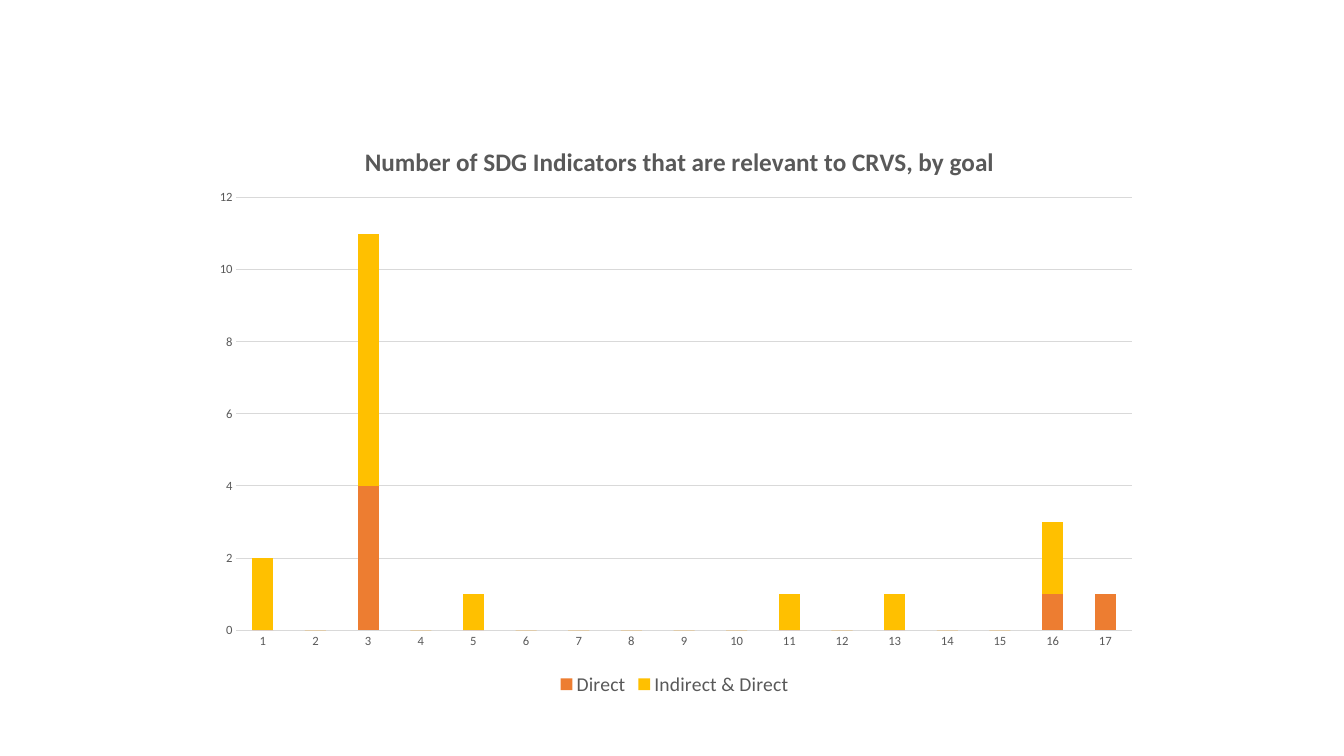
from dataclasses import dataclass

from pptx import Presentation
from pptx import util as u
from pptx.chart import chart as charts
from pptx.chart import data as chart_data
from pptx.dml import color
from pptx.enum import chart as kinds
from pptx.oxml import ns, xmlchemy


@dataclass(frozen=True)
class Theme:
    font: str = "Calibri"
    ink: str = "595959"
    rule: str = "D9D9D9"
    title_size: int = 18
    legend_size: int = 14
    axis_size: int = 9
    rule_width: float = 0.75


@dataclass(frozen=True)
class Measure:
    name: str
    fill: str
    counts: dict[int, int]  # goal number -> indicators; other goals have none


THEME = Theme()
TITLE = "Number of SDG Indicators that are relevant to CRVS, by goal"
GOALS = range(1, 18)
MEASURES = (
    Measure("Direct", "ED7D31", {3: 4, 16: 1, 17: 1}),
    Measure("Indirect & Direct", "FFC000", {1: 2, 3: 7, 5: 1, 11: 1, 13: 1, 16: 2}),
)


def rgb(code: str) -> color.RGBColor:
    return color.RGBColor.from_string(code)


def style_font(font, size: int, bold: bool = False) -> None:
    font.name = THEME.font
    font.size = u.Pt(size)
    font.bold = bold
    font.color.rgb = rgb(THEME.ink)


def style_rule(line) -> None:
    line.color.rgb = rgb(THEME.rule)
    line.width = u.Pt(THEME.rule_width)


def place(part: xmlchemy.BaseOxmlElement, index: int, **settings: object) -> None:
    """Give a chart part a manual layout, in fractions of the chart."""
    for old in part.findall(ns.qn("c:layout")):
        part.remove(old)
    layout = xmlchemy.OxmlElement("c:layout")
    manual = xmlchemy.OxmlElement("c:manualLayout")
    layout.append(manual)
    for tag, value in settings.items():
        setting = xmlchemy.OxmlElement(f"c:{tag}")
        setting.set("val", str(value))
        manual.append(setting)
    part.insert(index, layout)


def add_goal_chart(page) -> charts.Chart:
    data = chart_data.CategoryChartData(number_format="General")
    data.categories = [str(goal) for goal in GOALS]
    for measure in MEASURES:
        data.add_series(measure.name, [measure.counts.get(goal, 0) for goal in GOALS])
    frame = page.shapes.add_chart(
        kinds.XL_CHART_TYPE.COLUMN_STACKED,
        u.Cm(5), u.Cm(2.92), u.Cm(24), u.Cm(14.73), data,
    )
    return frame.chart


def style_columns(chart: charts.Chart) -> None:
    plot = chart.plots[0]
    plot.vary_by_categories = False
    plot.gap_width = 150
    plot.overlap = 100
    for series, measure in zip(plot.series, MEASURES):
        series.format.fill.solid()
        series.format.fill.fore_color.rgb = rgb(measure.fill)
    place(chart.element.find(".//" + ns.qn("c:plotArea")), 0,
          layoutTarget="inner", xMode="edge", yMode="edge",
          x=0.04, y=0.14, w=0.94, h=0.74)


def style_axes(chart: charts.Chart) -> None:
    for axis in (chart.category_axis, chart.value_axis):
        axis.major_tick_mark = kinds.XL_TICK_MARK.NONE
        axis.minor_tick_mark = kinds.XL_TICK_MARK.NONE
        style_font(axis.tick_labels.font, THEME.axis_size)
    style_rule(chart.category_axis.format.line)
    values = chart.value_axis
    values.minimum_scale, values.maximum_scale, values.major_unit = 0, 12, 2
    values.format.line.fill.background()
    values.has_major_gridlines = True
    style_rule(values.major_gridlines.format.line)


def add_title(chart: charts.Chart) -> None:
    chart.has_title = True
    para = chart.chart_title.text_frame.paragraphs[0]
    span = para.add_run()
    span.text = TITLE
    style_font(span.font, THEME.title_size, bold=True)
    chart.chart_title.include_in_layout = False
    place(chart.element.find(".//" + ns.qn("c:title")), 1,
          xMode="edge", yMode="edge", x=0.17, y=0.04)


def add_legend(chart: charts.Chart) -> None:
    chart.has_legend = True
    chart.legend.position = kinds.XL_LEGEND_POSITION.BOTTOM
    chart.legend.include_in_layout = False
    style_font(chart.legend.font, THEME.legend_size)


def main() -> None:
    deck = Presentation()
    deck.slide_width, deck.slide_height = u.Cm(33.87), u.Cm(19.05)
    page = deck.slides.add_slide(deck.slide_layouts[6])

    # Stacked columns, one per goal
    chart = add_goal_chart(page)
    style_font(chart.font, THEME.axis_size)
    style_columns(chart)
    style_axes(chart)

    # Heading and key
    add_title(chart)
    add_legend(chart)

    deck.save("out.pptx")


if __name__ == "__main__":
    main()
